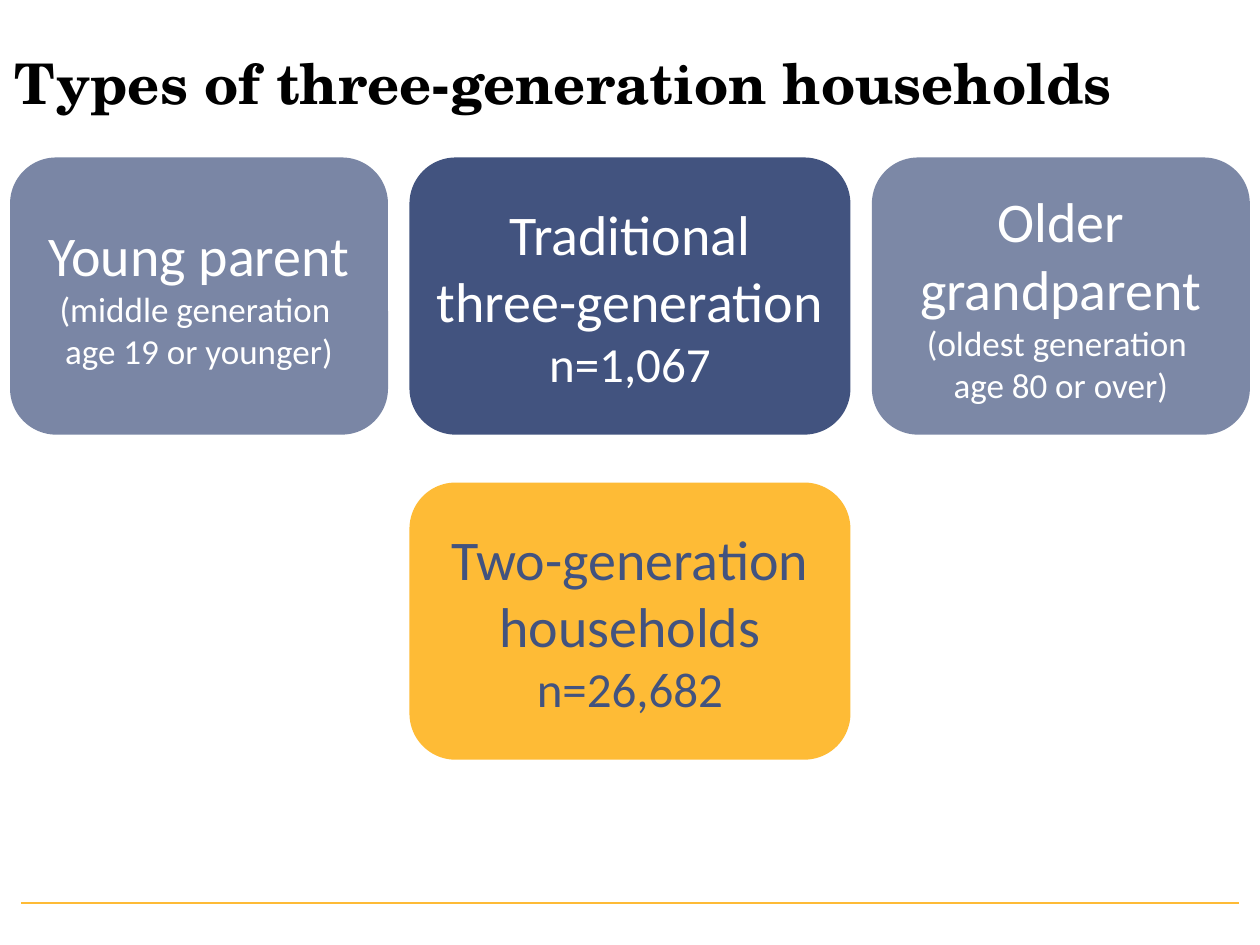
from dataclasses import dataclass

from lxml.etree import SubElement
from pptx import Presentation
from pptx.dml.color import RGBColor
from pptx.enum.shapes import MSO_CONNECTOR as Link, MSO_SHAPE as Shape
from pptx.enum.text import MSO_ANCHOR as Anchor, PP_ALIGN as Align
from pptx.oxml.ns import qn
from pptx.util import Inches, Pt

NAVY, GOLD, WHITE, BLACK = "42537F", "FEBB36", "FFFFFF", "000000"
SIDE, MID, HIGH, GAP = 3, 3.5, 2.2, 0.17
LEFT = (10 - MID) / 2
TOP, LOW = 1.25, 3.83


@dataclass
class Card:
    left: float
    top: float
    width: float
    fill: str
    ink: str
    lines: list[tuple[str, int]]
    alpha: int = 100


def paint(target, color: str) -> None:
    """Give a fill or line format one solid colour."""
    target.solid()
    target.fore_color.rgb = RGBColor.from_string(color)


def write(frame, lines: list[tuple[str, int]], align, **style) -> None:
    """Fill a frame with one paragraph per (text, size) line."""
    frame.word_wrap = True
    frame.vertical_anchor = Anchor.MIDDLE
    color = style.pop("color")
    for i, (text, size) in enumerate(lines):
        para = frame.paragraphs[0] if i == 0 else frame.add_paragraph()
        para.alignment = align
        run = para.add_run()
        run.text = text
        for key, value in {"size": Pt(size), **style}.items():
            setattr(run.font, key, value)
        run.font.color.rgb = RGBColor.from_string(color)


def draw(slide, card: Card) -> None:
    box = slide.shapes.add_shape(
        Shape.ROUNDED_RECTANGLE, Inches(card.left), Inches(card.top),
        Inches(card.width), Inches(HIGH))
    box.shadow.inherit = False
    box.line.fill.background()
    paint(box.fill, card.fill)
    if card.alpha < 100:
        tint = box.fill._xPr.find(".//" + qn("a:srgbClr"))
        SubElement(tint, qn("a:alpha"), val=str(card.alpha * 1000))
    write(box.text_frame, card.lines, Align.CENTER,
          name="Calibri", color=card.ink)


def rule(slide) -> None:
    """Draw the thin line at the foot of the slide."""
    line = slide.shapes.add_connector(
        Link.STRAIGHT, Inches(9.83), Inches(7.17), Inches(0.17), Inches(7.17))
    paint(line.line.fill, GOLD)
    line.line.width = Pt(1.25)
    SubElement(line._element.spPr, qn("a:effectLst"))


def main() -> None:
    deck = Presentation()
    deck.slide_width, deck.slide_height = Inches(10), Inches(7.5)
    slide = deck.slides.add_slide(deck.slide_layouts[6])
    rule(slide)
    cards = [
        Card(LEFT, LOW, MID, GOLD, NAVY,
             [("Two-generation households", 32), ("n=26,682", 28)]),
        Card(LEFT - GAP - SIDE, TOP, SIDE, NAVY, WHITE,
             [("Young parent", 32), ("(middle generation ", 20),
              ("age 19 or younger)", 20)], 70),
        Card(LEFT, TOP, MID, NAVY, WHITE,
             [("Traditional three-generation", 32), ("n=1,067", 28)]),
        Card(LEFT + MID + GAP, TOP, SIDE, NAVY, WHITE,
             [("Older grandparent", 32), ("(oldest generation ", 20),
              ("age 80 or over)", 20)], 69),
    ]
    for card in cards:
        draw(slide, card)
    title = slide.shapes.add_textbox(
        Inches(0.02), Inches(0.03), Inches(9), Inches(1.25))
    write(title.text_frame, [("Types of three-generation households", 32)],
          Align.LEFT, name="TeX Gyre Schola", bold=True, color=BLACK)
    deck.save("out.pptx")


if __name__ == "__main__":
    main()
